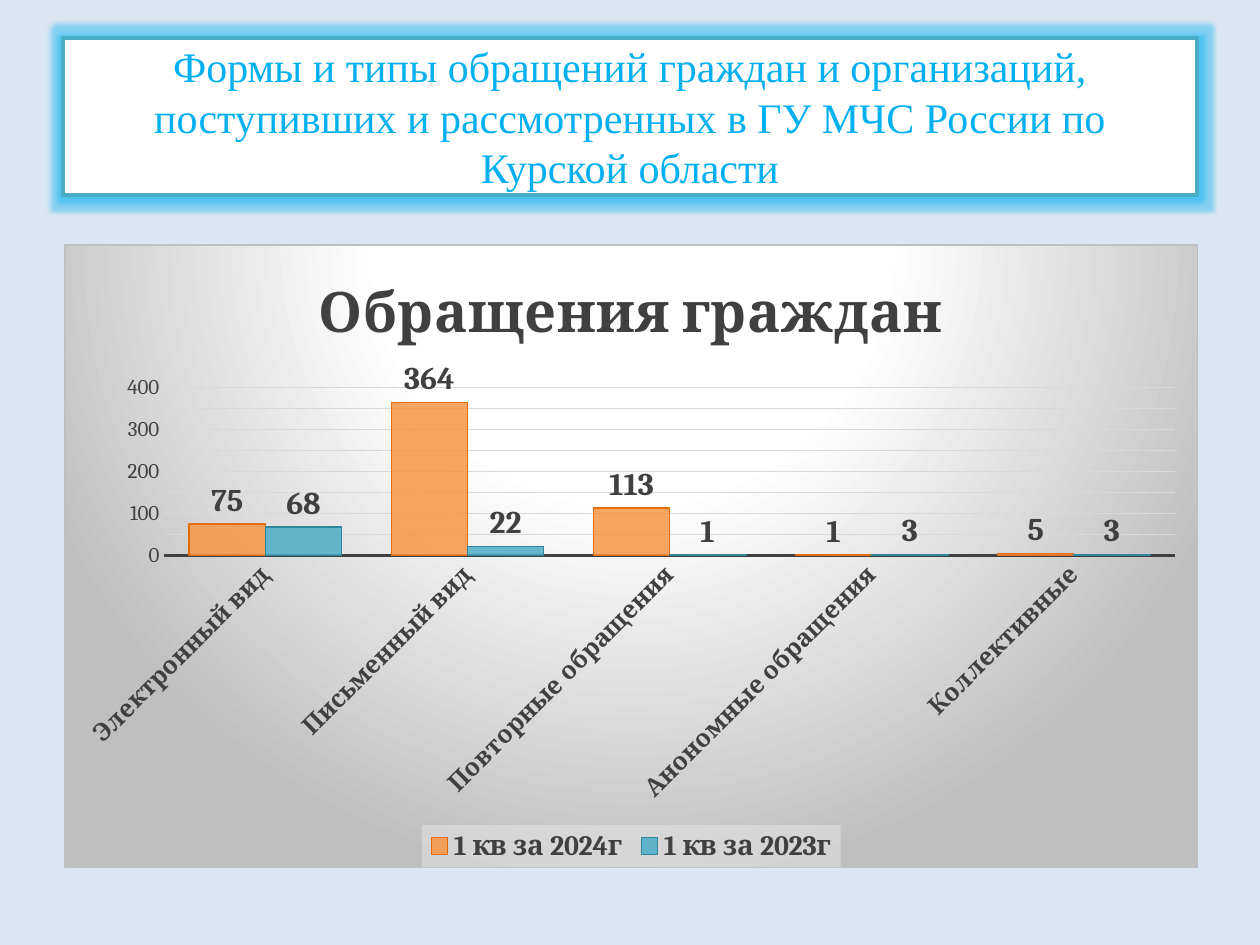
import pptx
import pptx.chart.data
import pptx.dml.color
import pptx.enum.chart
import pptx.enum.shapes
import pptx.enum.text
import pptx.oxml
import pptx.oxml.ns
import pptx.util
import copy
import dataclasses


@dataclasses.dataclass
class Theme:
    background: str = "DCE6F2"
    white: str = "FFFFFF"
    heading: str = "00B0F0"
    frame: str = "4BACC6"
    text: str = "404040"
    grid: str = "D9D9D9"
    border: str = "BFBFBF"
    legend: str = "F2F2F2"
    heading_font: str = "Times New Roman"
    chart_font: str = "Cambria"
    heading_size: int = 24
    title_size: int = 32
    label_size: int = 18
    legend_size: int = 16
    category_size: int = 14
    value_size: int = 12


theme = Theme()
Pt = pptx.util.Pt
qn = pptx.oxml.ns.qn
color = pptx.dml.color.RGBColor.from_string
namespaces = pptx.oxml.ns.nsdecls("a", "c")


def style_font(font, name, size, value, bold=False):
    font.name = name
    font.size = Pt(size)
    font.bold = bold
    font.color.rgb = color(value)


def style_line(line, value, width):
    line.color.rgb = color(value)
    line.width = Pt(width)


presentation = pptx.Presentation()
presentation.slide_width = Pt(720)
presentation.slide_height = Pt(540)
slide = presentation.slides.add_slide(presentation.slide_layouts[6])
slide.background.fill.solid()
slide.background.fill.fore_color.rgb = color(theme.background)

heading = slide.shapes.add_shape(
    pptx.enum.shapes.MSO_SHAPE.RECTANGLE, Pt(36), Pt(21.6), Pt(648), Pt(90)
)
heading.shadow.inherit = False
heading.fill.solid()
heading.fill.fore_color.rgb = color(theme.white)
style_line(heading.line, theme.frame, 2)
glow = pptx.oxml.parse_xml(
    f'<a:glow {namespaces} rad="63500"><a:srgbClr val="{theme.heading}">'
    '<a:alpha val="40000"/></a:srgbClr></a:glow>'
)
heading.element.spPr.find(qn("a:effectLst")).append(glow)
heading.text_frame.text = (
    "Формы и типы обращений граждан и организаций, "
    "поступивших и рассмотренных в ГУ МЧС России по Курской области"
)
heading.text_frame.word_wrap = True
heading.text_frame.vertical_anchor = pptx.enum.text.MSO_ANCHOR.MIDDLE
paragraph = heading.text_frame.paragraphs[0]
paragraph.alignment = pptx.enum.text.PP_ALIGN.CENTER
style_font(paragraph.runs[0].font, theme.heading_font, theme.heading_size, theme.heading)

chart_data = pptx.chart.data.CategoryChartData()
chart_data.categories = [
    "Электронный вид",
    "Письменный вид",
    "Повторные обращения",
    "Анономные обращения",
    "Коллективные",
]
chart_data.add_series("1 кв за 2024г", [75, 364, 113, 1, 5])
chart_data.add_series("1 кв за 2023г", [68, 22, 1, 3, 3])
chart = slide.shapes.add_chart(
    pptx.enum.chart.XL_CHART_TYPE.COLUMN_CLUSTERED,
    Pt(36.72), Pt(139.68), Pt(648), Pt(356.4), chart_data,
).chart
style_font(chart.font, theme.chart_font, theme.value_size, theme.text)

chart.has_title = True
chart.chart_title.include_in_layout = False
chart.chart_title.text_frame.text = "Обращения граждан"
title_run = chart.chart_title.text_frame.paragraphs[0].runs[0]
style_font(title_run.font, theme.chart_font, theme.title_size, theme.text, True)

chart_area = pptx.oxml.parse_xml(
    f'<c:spPr {namespaces}><a:gradFill><a:gsLst>'
    f'<a:gs pos="0"><a:srgbClr val="{theme.white}"/></a:gs>'
    f'<a:gs pos="39000"><a:srgbClr val="{theme.white}"/></a:gs>'
    f'<a:gs pos="100000"><a:srgbClr val="{theme.border}"/></a:gs></a:gsLst>'
    '<a:path path="circle"><a:fillToRect l="50000" t="-80000" r="50000" b="180000"/></a:path>'
    f'</a:gradFill><a:ln w="9525"><a:solidFill><a:srgbClr val="{theme.border}"/>'
    '</a:solidFill></a:ln></c:spPr>'
)
chart.element.find(qn("c:chart")).addnext(chart_area)

plot = chart.plots[0]
plot.gap_width = 65
plot.overlap = 0
plot.vary_by_categories = False
for series, fill, line in zip(plot.series, ("F79646", "4BACC6"), ("E46C0A", "31859C")):
    series.invert_if_negative = False
    series.format.fill.solid()
    series.format.fill.fore_color.rgb = color(fill)
    alpha = pptx.oxml.parse_xml(f'<a:alpha {namespaces} val="85000"/>')
    series.format.fill._xPr.find(qn("a:solidFill"))[0].append(alpha)
    style_line(series.format.line, line, 0.75)
    labels = series.data_labels
    labels.show_value = True
    labels.position = pptx.enum.chart.XL_LABEL_POSITION.OUTSIDE_END
    style_font(labels.font, theme.chart_font, theme.label_size, theme.text, True)

category_axis = chart.category_axis
value_axis = chart.value_axis
for axis in (category_axis, value_axis):
    axis.major_tick_mark = pptx.enum.chart.XL_TICK_MARK.NONE
    axis.minor_tick_mark = pptx.enum.chart.XL_TICK_MARK.NONE
style_font(category_axis.tick_labels.font, theme.chart_font, theme.category_size, theme.text, True)
style_line(category_axis.format.line, theme.text, 1.5)
label_body = category_axis._element.find(qn("c:txPr")).find(qn("a:bodyPr"))
label_body.set("rot", "-2700000")
label_body.set("vert", "horz")

style_font(value_axis.tick_labels.font, theme.chart_font, theme.value_size, theme.text)
value_axis.format.line.fill.background()
value_axis.minimum_scale = 0
value_axis.maximum_scale = 400
value_axis.major_unit = 100
value_axis.minor_unit = 50
value_axis.has_major_gridlines = True
value_axis.has_minor_gridlines = True
style_line(value_axis.major_gridlines.format.line, theme.grid, 0.75)
major_style = value_axis._element.find(qn("c:majorGridlines")).find(qn("c:spPr"))
value_axis._element.find(qn("c:minorGridlines")).append(copy.deepcopy(major_style))

chart.has_legend = True
legend = chart.legend
legend.position = pptx.enum.chart.XL_LEGEND_POSITION.BOTTOM
legend.include_in_layout = False
style_font(legend.font, theme.chart_font, theme.legend_size, theme.text, True)
legend_fill = pptx.oxml.parse_xml(
    f'<c:spPr {namespaces}><a:solidFill><a:srgbClr val="{theme.legend}">'
    '<a:alpha val="39000"/></a:srgbClr></a:solidFill></c:spPr>'
)
legend._element.find(qn("c:txPr")).addprevious(legend_fill)

presentation.save("out.pptx")
